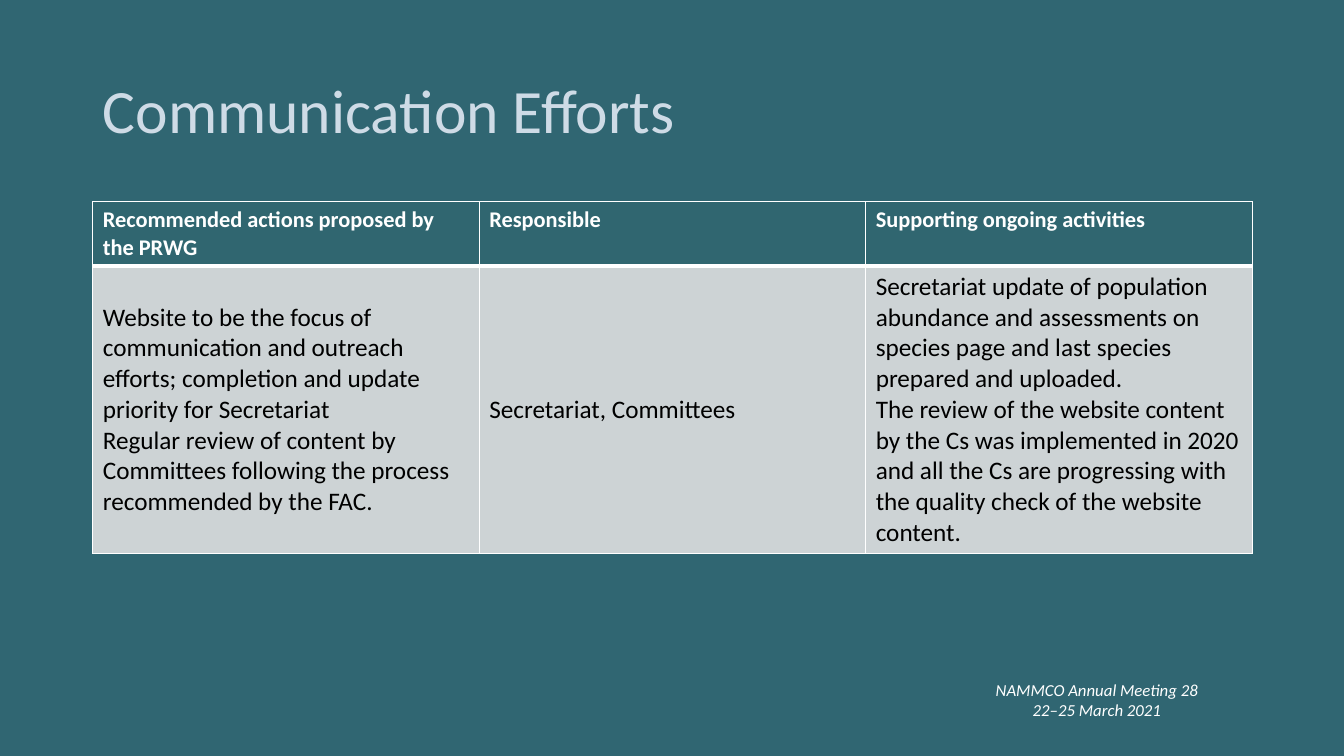
from pptx import Presentation
from pptx.dml.color import RGBColor
from pptx.enum.text import MSO_ANCHOR as Anchor, PP_ALIGN as Align
from pptx.oxml import parse_xml
from pptx.oxml.ns import nsdecls
from pptx.util import Inches, Pt

TEAL = RGBColor(0x30, 0x66, 0x72)
HEADER_TEAL = RGBColor(0x30, 0x66, 0x70)
PALE_BLUE = RGBColor(0xCE, 0xDB, 0xE6)
GREY = RGBColor(0xCD, 0xD3, 0xD5)
WHITE = RGBColor(0xFF, 0xFF, 0xFF)
BLACK = RGBColor(0x00, 0x00, 0x00)

HEADERS = ["Recommended actions proposed by the PRWG", "Responsible",
           "Supporting ongoing activities"]
ACTIONS = [
    "Website to be the focus of communication and outreach efforts; "
    "completion and update priority for Secretariat\n"
    "Regular review of content by Committees following the process "
    "recommended by the FAC.",
    "Secretariat, Committees",
    "Secretariat update of population abundance and assessments on "
    "species page and last species prepared and uploaded.\n"
    "The review of the website content by the Cs was implemented in 2020 "
    "and all the Cs are progressing with the quality check of the website "
    "content.",
]


class SlideBuilder:
    font = "Calibri"

    def __init__(self, prs):
        self.s = prs.slides.add_slide(prs.slide_layouts[5])
        fill = self.s.background.fill
        fill.solid()
        fill.fore_color.rgb = TEAL

    def set_text(self, tf, text, size, color, bold=False, italic=False,
                 align=Align.LEFT, spacing=1.0):
        tf.text = text
        for p in tf.paragraphs:
            p.alignment = align
            p.line_spacing = spacing
            for r in p.runs:
                r.font.name = self.font
                r.font.size = Pt(size)
                r.font.color.rgb = color
                r.font.bold = bold
                r.font.italic = italic

    def place(self, sp, left, top, width, height):
        sp.left, sp.top = Inches(left), Inches(top)
        sp.width, sp.height = Inches(width), Inches(height)

    def title(self, text, *box):
        sp = self.s.shapes.title
        self.place(sp, *box)
        sp.text_frame.vertical_anchor = Anchor.MIDDLE
        self.set_text(sp.text_frame, text, 44, PALE_BLUE, spacing=0.9)

    def footer(self, text, *box):
        sp = self.s.shapes.add_textbox(*map(Inches, box))
        tf = sp.text_frame
        tf.word_wrap = True
        tf.vertical_anchor = Anchor.MIDDLE
        self.set_text(tf, text, 12, WHITE, italic=True, align=Align.CENTER)

    def borders(self, cell, **widths):
        tc_pr = cell._tc.get_or_add_tcPr()
        for side in "LRTB":
            tc_pr.append(parse_xml(
                f'<a:ln{side} {nsdecls("a")} w="{Pt(widths.get(side, 1))}">'
                f'<a:solidFill><a:srgbClr val="{WHITE}"/></a:solidFill>'
                f'</a:ln{side}>'))

    def cell(self, cell, text, size, color, fill, anchor, bold=False, **widths):
        self.borders(cell, **widths)
        cell.fill.solid()
        cell.fill.fore_color.rgb = fill
        cell.vertical_anchor = anchor
        self.set_text(cell.text_frame, text, size, color, bold)

    def table(self, headers, body, left, top, width, heights):
        shape = self.s.shapes.add_table(2, len(headers), Inches(left), Inches(top),
                                        Inches(width), Inches(sum(heights)))
        table = shape.table
        for row, height in zip(table.rows, heights):
            row.height = Inches(height)
        for col, (head, text) in enumerate(zip(headers, body)):
            self.cell(table.cell(0, col), head, 16, WHITE, HEADER_TEAL,
                      Anchor.TOP, bold=True, B=3)
            self.cell(table.cell(1, col), text, 18, BLACK, GREY,
                      Anchor.MIDDLE, T=3)


def main():
    prs = Presentation()
    prs.slide_width, prs.slide_height = Inches(13.33), Inches(7.5)
    slide = SlideBuilder(prs)

    # Meeting name and date
    slide.footer("NAMMCO Annual Meeting 28\n22–25 March 2021", 9.73, 6.74, 2.3, 0.4)

    # Title and table of actions
    slide.title("Communication Efforts", 0.92, 0.4, 11.5, 1.45)
    slide.table(HEADERS, ACTIONS, 0.92, 2, 11.5, (0.64, 2.85))

    prs.save("out.pptx")


if __name__ == "__main__":
    main()
